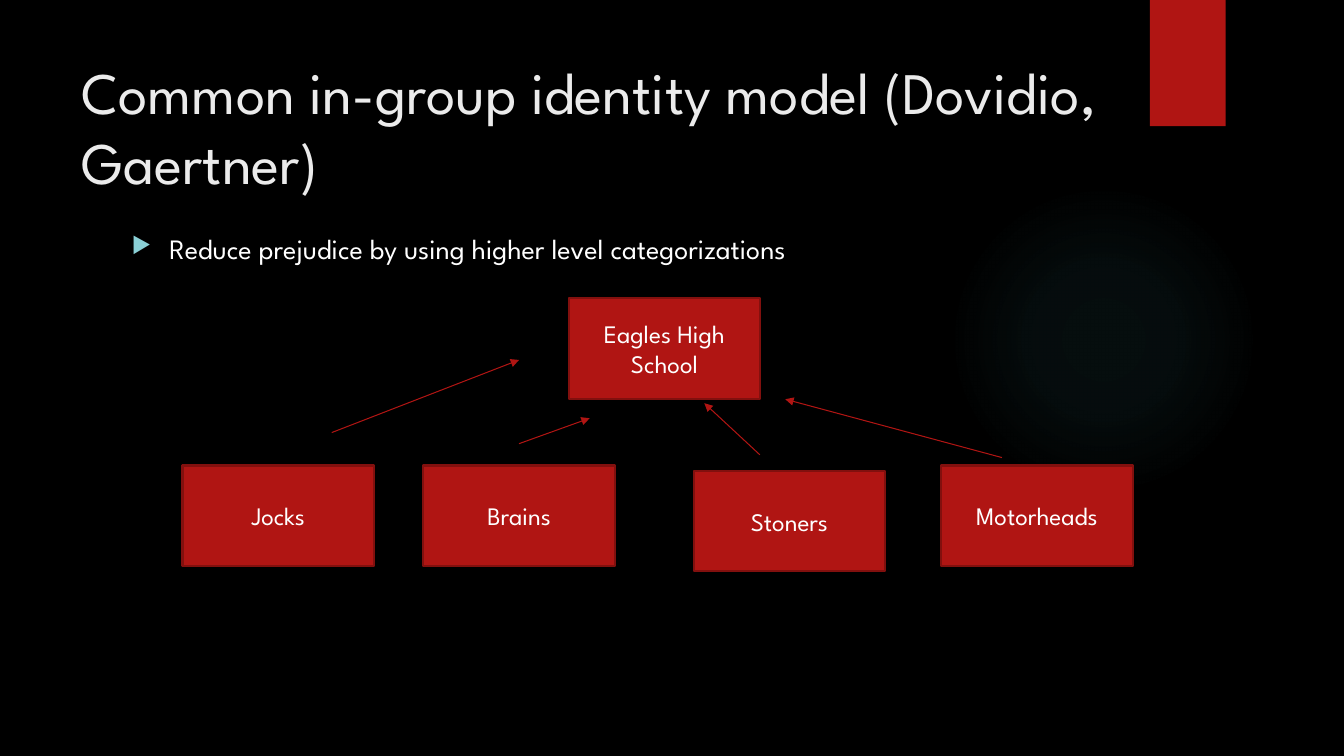
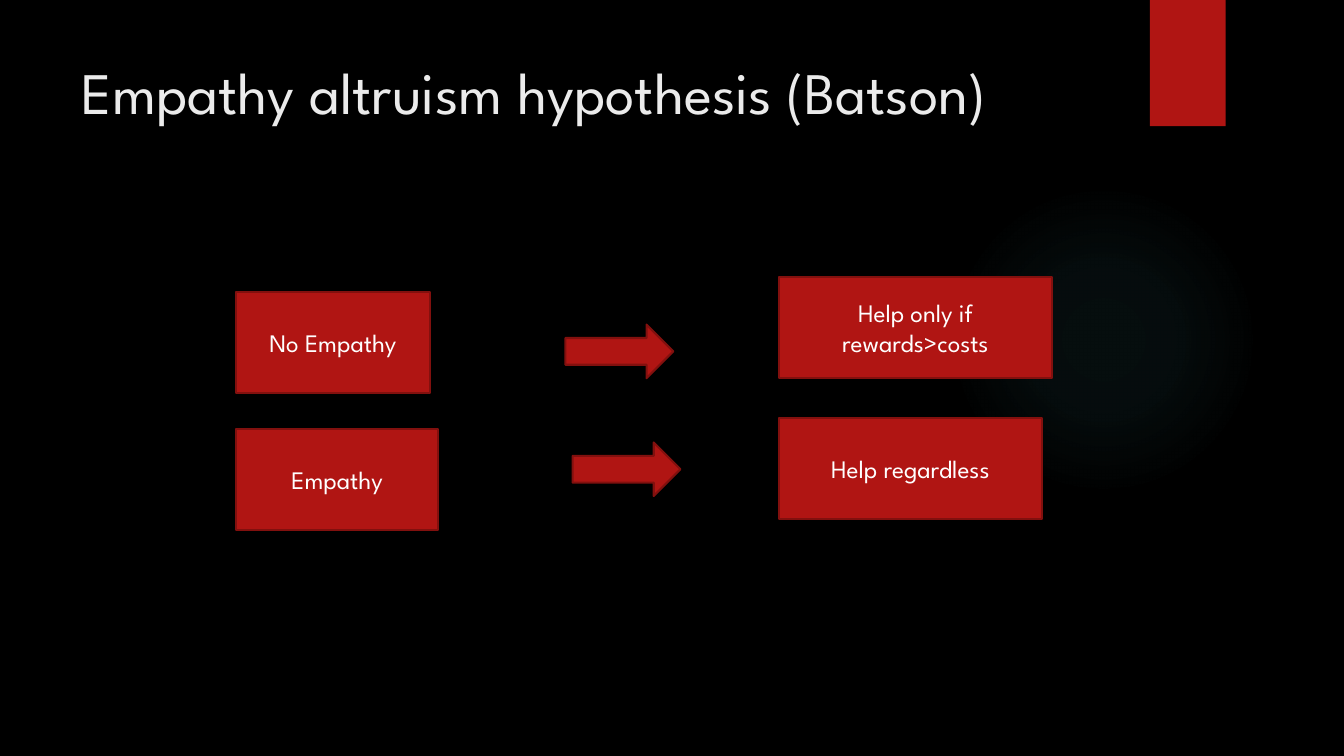
from dataclasses import dataclass

from lxml.etree import SubElement
from pptx import Presentation
from pptx.dml.color import RGBColor as RGB
from pptx.enum.shapes import MSO_CONNECTOR as Connector, MSO_SHAPE as Shape
from pptx.enum.text import MSO_ANCHOR as Anchor, PP_ALIGN as Align
from pptx.oxml import parse_xml
from pptx.oxml.ns import nsdecls, qn
from pptx.util import Cm, Pt


@dataclass(frozen=True)
class Theme:
    font: str = "League Spartan"
    background: str = "000000"
    accent: str = "B01513"
    outline: str = "82100E"
    glow: str = "50B9C1"
    bullet: str = "8AD0D6"
    title: str = "EBEBEB"
    text: str = "FFFFFF"
    title_size: int = 42
    body_size: int = 20
    box_size: int = 18
    outline_width: float = 1.5
    line_width: float = 0.75


BOX_W, BOX_H = 4.83, 2.54


class Deck:
    """Holds the style and the current slide."""

    def __init__(self, theme):
        self.theme = theme
        self.prs = Presentation()
        self.prs.slide_width, self.prs.slide_height = Cm(33.87), Cm(19.05)
        self.slide = None

    def new_slide(self, title):
        self.slide = self.prs.slides.add_slide(self.prs.slide_layouts[6])
        fill = self.slide.background.fill
        fill.solid()
        fill.fore_color.rgb = RGB.from_string(self.theme.background)
        self.glow(23.9, 4.65, 7.82)
        self.shape(Shape.RECTANGLE, 28.98, 0, 1.91, 3.18, outlined=False)
        self.text(title, 1.8, 1.27, 26.14, 3.89,
                  self.theme.title_size, self.theme.title)

    def glow(self, x, y, size):
        sp = self.shape(Shape.OVAL, x, y, size, size, outlined=False)
        stops = "".join(
            f'<a:gs pos="{pos * 1000}"><a:srgbClr val="{self.theme.glow}">'
            f'<a:alpha val="{alpha * 1000}"/></a:srgbClr></a:gs>'
            for pos, alpha in ((0, 7), (36, 6), (69, 0)))
        gradient = parse_xml(
            f'<a:gradFill {nsdecls("a")} rotWithShape="1"><a:gsLst>{stops}</a:gsLst>'
            '<a:path path="circle"><a:fillToRect l="50000" t="50000" '
            'r="50000" b="50000"/></a:path></a:gradFill>')
        solid = sp.element.spPr.find(qn("a:solidFill"))
        solid.getparent().replace(solid, gradient)

    def shape(self, kind, x, y, w, h, outlined=True):
        sp = self.slide.shapes.add_shape(kind, Cm(x), Cm(y), Cm(w), Cm(h))
        sp.shadow.inherit = False
        sp.fill.solid()
        sp.fill.fore_color.rgb = RGB.from_string(self.theme.accent)
        if outlined:
            sp.line.color.rgb = RGB.from_string(self.theme.outline)
            sp.line.width = Pt(self.theme.outline_width)
        else:
            sp.line.fill.background()
        return sp

    def box(self, text, x, y, w=BOX_W):
        tf = self.shape(Shape.RECTANGLE, x, y, w, BOX_H).text_frame
        tf.word_wrap = True
        tf.vertical_anchor = Anchor.MIDDLE
        tf.text = text
        tf.paragraphs[0].alignment = Align.CENTER
        self.format(tf.paragraphs[0], self.theme.box_size, self.theme.text)

    def block_arrow(self, x, y):
        self.shape(Shape.RIGHT_ARROW, x, y, 2.72, 1.35)

    def text(self, text, x, y, w, h, size, color):
        tf = self.slide.shapes.add_textbox(Cm(x), Cm(y), Cm(w), Cm(h)).text_frame
        tf.word_wrap = True
        tf.text = text
        self.format(tf.paragraphs[0], size, color)
        return tf.paragraphs[0]

    def bullet(self, text, x, y, w, h):
        p = self.text(text, x, y, w, h, self.theme.body_size, self.theme.text)
        pPr = p._p.get_or_add_pPr()
        pPr.set("marL", str(Cm(0.95)))
        pPr.set("indent", str(-Cm(0.95)))
        color = SubElement(pPr, qn("a:buClr"))
        SubElement(color, qn("a:srgbClr"), val=self.theme.bullet)
        SubElement(pPr, qn("a:buSzPct"), val="80000")
        SubElement(pPr, qn("a:buChar"), char="▶")

    def arrow(self, start, end):
        line = self.slide.shapes.add_connector(
            Connector.STRAIGHT, *(Cm(v) for v in (*start, *end)))
        line.line.color.rgb = RGB.from_string(self.theme.accent)
        line.line.width = Pt(self.theme.line_width)
        SubElement(line.line._get_or_add_ln(), qn("a:tailEnd"), type="triangle")
        SubElement(line._element.spPr, qn("a:effectLst"))

    def format(self, p, size, color):
        for r in p.runs:
            r.font.name = self.theme.font
            r.font.size = Pt(size)
            r.font.color.rgb = RGB.from_string(color)


def identity_slide(deck):
    deck.new_slide("Common in-group identity model (Dovidio, Gaertner)")
    deck.bullet("Reduce prejudice by using higher level categorizations",
                3.07, 5.72, 24.84, 11.66)
    # Shared category above, its groups below
    deck.box("Eagles High School", 14.33, 7.52)
    groups = (
        ("Jocks", 4.6, 11.73, (8.36, 10.9), (13.08, 9.07)),
        ("Brains", 10.67, 11.73, (13.08, 11.18), (14.86, 10.54)),
        ("Stoners", 17.48, 11.86, (19.15, 11.46), (17.75, 10.16)),
        ("Motorheads", 23.72, 11.73, (25.25, 11.53), (19.79, 10.06)),
    )
    for name, x, y, start, end in groups:
        deck.box(name, x, y)
        deck.arrow(start, end)


def empathy_slide(deck):
    deck.new_slide("Empathy altruism hypothesis (Batson)")
    # Each row: cause (text, top, width), arrow (left, top), outcome
    rows = (
        (("No Empathy", 7.37, 4.9), (14.25, 8.18),
         ("Help only if rewards>costs", 6.99, 6.88)),
        (("Empathy", 10.82, 5.11), (14.43, 11.15),
         ("Help regardless", 10.54, 6.63)),
    )
    for cause, arrow, outcome in rows:
        for x, (text, y, w) in ((5.94, cause), (19.63, outcome)):
            deck.box(text, x, y, w)
        deck.block_arrow(*arrow)


def main():
    deck = Deck(Theme())
    identity_slide(deck)
    empathy_slide(deck)
    deck.prs.save("out.pptx")


if __name__ == "__main__":
    main()
